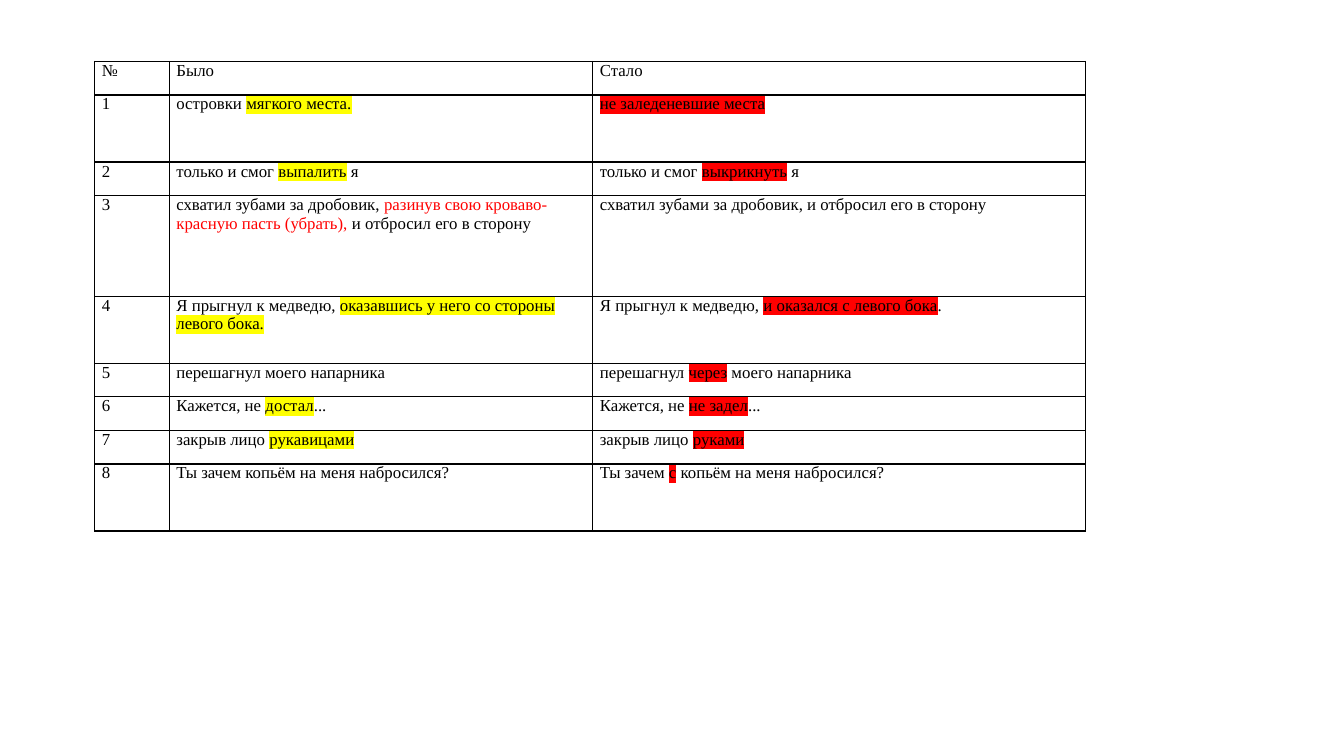
"""Build a slide with a table of text corrections: before and after."""
from lxml import etree
from pptx import Presentation
from pptx.dml.color import RGBColor
from pptx.oxml.ns import qn
from pptx.util import Inches, Pt

BLACK, RED, YELLOW = "000000", "FF0000", "FFFF00"
BLANK_LAYOUT = 6
ROW_UNIT = 4.66 / 14
COLUMN_WIDTHS = (0.74, 4.2, 4.89)
MARKERS = (None, YELLOW, RED)

# Each row: height in units, text before, text after; "|" bounds the marked words.
CORRECTIONS = [
    (1, "Было", "Стало"),
    (2, "островки |мягкого места.", "|не заледеневшие места"),
    (1, "только и смог |выпалить| я", "только и смог |выкрикнуть| я"),
    (3, "схватил зубами за дробовик, |разинув свою кроваво-красную пасть (убрать),"
        "| и отбросил его в сторону",
     "схватил зубами за дробовик, и отбросил его в сторону"),
    (2, "Я прыгнул к медведю, |оказавшись у него со стороны левого бока.",
     "Я прыгнул к медведю, |и оказался с левого бока|."),
    (1, "перешагнул моего напарника", "перешагнул |через| моего напарника"),
    (1, "Кажется, не |достал|...", "Кажется, не |не задел|..."),
    (1, "закрыв лицо |рукавицами", "закрыв лицо |руками"),
    (2, "Ты зачем копьём на меня набросился?",
     "Ты зачем |с| копьём на меня набросился?"),
]
REMOVED_ROW = 3


def add_color(parent, tag, color):
    holder = etree.SubElement(parent, qn(tag))
    etree.SubElement(holder, qn("a:srgbClr"), val=color)


def format_cell(cell):
    cell.margin_left = cell.margin_right = Inches(0.07)
    cell.margin_top = cell.margin_bottom = 0
    properties = cell._tc.get_or_add_tcPr()
    for side in ("a:lnL", "a:lnR", "a:lnT", "a:lnB"):
        border = etree.SubElement(properties, qn(side), w=str(Pt(1)))
        add_color(border, "a:solidFill", BLACK)
    cell.fill.background()


presentation = Presentation()
presentation.slide_width = Inches(13.33)
presentation.slide_height = Inches(7.5)
slide = presentation.slides.add_slide(presentation.slide_layouts[BLANK_LAYOUT])

corrections = slide.shapes.add_table(
    len(CORRECTIONS), len(COLUMN_WIDTHS), Inches(0.94), Inches(0.61),
    Inches(sum(COLUMN_WIDTHS)), Inches(14 * ROW_UNIT)).table
corrections.first_row = False
corrections.horz_banding = False
for column, width in zip(corrections.columns, COLUMN_WIDTHS):
    column.width = Inches(width)

for number, (units, before, after) in enumerate(CORRECTIONS):
    corrections.rows[number].height = Inches(units * ROW_UNIT)
    label = str(number) if number else "№"
    for position, text in enumerate((label, before, after)):
        cell = corrections.cell(number, position)
        format_cell(cell)
        phrase = cell.text_frame.paragraphs[0]
        phrase.font.name = "Times New Roman"
        phrase.font.size = Pt(12)
        phrase.font.color.rgb = RGBColor.from_string(BLACK)
        for order, words in enumerate(text.split("|")):
            if not words:
                continue
            run = phrase.add_run()
            run.text = words
            if order == 1 and number == REMOVED_ROW:
                run.font.color.rgb = RGBColor.from_string(RED)
            elif order == 1:
                add_color(run._r.get_or_add_rPr(), "a:highlight", MARKERS[position])

presentation.save("out.pptx")
